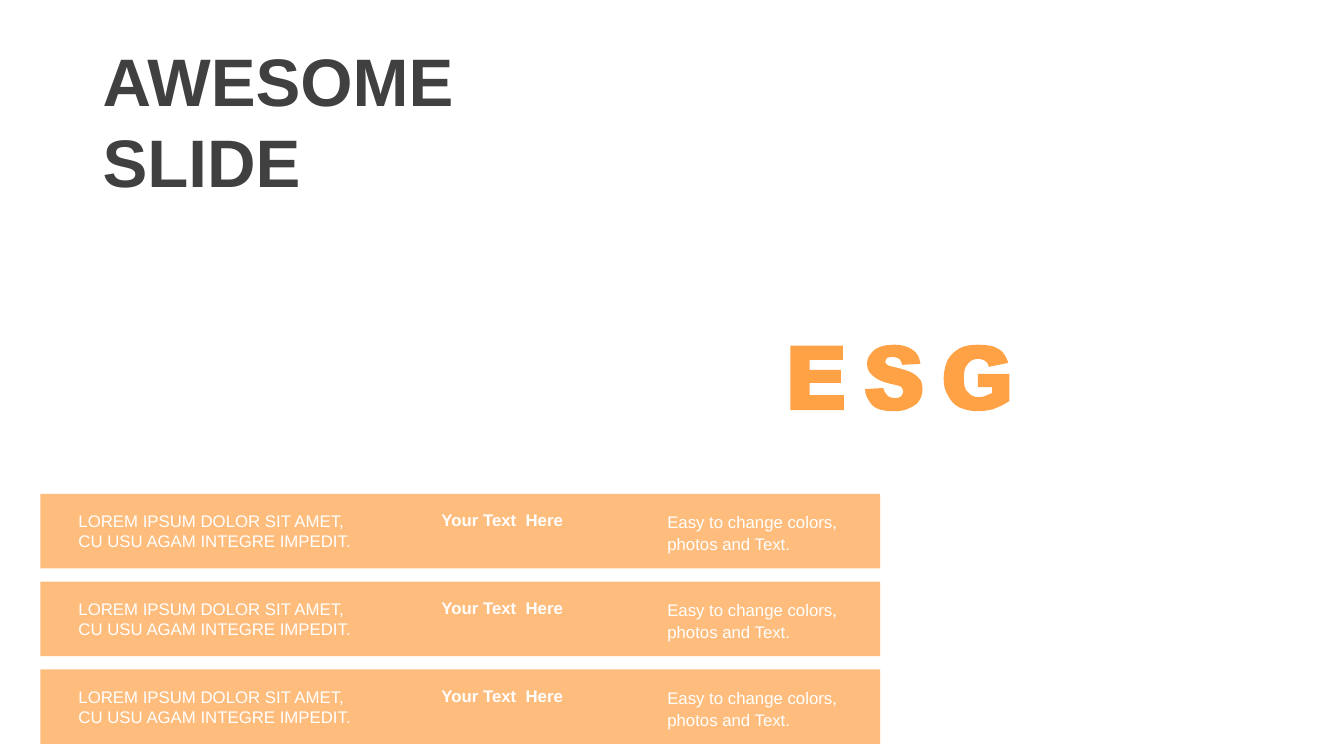
from dataclasses import dataclass

from lxml.etree import SubElement
from pptx import Presentation
from pptx.dml.color import RGBColor
from pptx.dml.fill import FillFormat
from pptx.enum.shapes import MSO_SHAPE as Shape
from pptx.enum.text import MSO_ANCHOR as Anchor, MSO_AUTO_SIZE as Fit
from pptx.oxml.ns import qn
from pptx.util import Pt

PX = 9144  # EMU in one px, 100 px to the inch
ORANGE, GREY, WHITE = "FFA246", "404040", "FFFFFF"
ROWS, PITCH, TOP = 3, 87, 490

Outline = list[tuple[int, ...]]


@dataclass
class Label:
    text: str
    left: int
    top: int
    width: int
    height: int
    size: int = 12
    color: str = WHITE
    bold: bool = False
    middle: bool = False
    spacing: float | None = None


# Tops of row labels count from the top of the bar
TITLE = Label("AWESOME\nSLIDE", 92, 33, 390, 172, 48, GREY, True, True)
CELLS = [
    Label("Easy to change colors, photos and Text.", 652, 11, 231, 53, spacing=1.1),
    Label("Your Text  Here", 428, 11, 185, 30, bold=True),
    Label("LOREM IPSUM DOLOR SIT AMET,\nCU USU AGAM INTEGRE IMPEDIT.",
          68, 12, 321, 50, middle=True),
]

# Letter outlines: a start, then lines (x, y) and curves (x1, y1, x2, y2, x, y)
LETTER_E = [
    (784, 343), (836, 343), (836, 357), (803, 357), (803, 367), (834, 367),
    (834, 380), (803, 380), (803, 392), (837, 392), (837, 407), (784, 407),
]
LETTER_S = [
    (887, 342), (895, 342, 901, 344, 905, 347), (910, 350, 912, 355, 913, 361),
    (895, 362), (894, 359, 893, 357, 892, 356), (890, 355, 888, 354, 885, 354),
    (883, 354, 881, 355, 880, 355), (879, 356, 878, 358, 878, 359),
    (878, 360, 879, 361, 880, 362), (880, 363, 883, 363, 886, 364),
    (895, 366, 901, 368, 905, 370), (908, 372, 911, 374, 913, 377),
    (914, 379, 915, 383, 915, 386), (915, 390, 914, 394, 912, 397),
    (910, 401, 906, 403, 902, 405), (898, 407, 893, 408, 887, 408),
    (876, 408, 869, 406, 865, 402), (861, 397, 858, 392, 858, 386),
    (876, 385), (877, 388, 878, 390, 879, 391), (881, 394, 884, 395, 887, 395),
    (890, 395, 892, 395, 894, 393), (895, 392, 896, 391, 896, 389),
    (896, 387, 895, 386, 894, 384), (893, 383, 889, 382, 884, 381),
    (875, 379, 869, 376, 866, 373), (862, 370, 860, 366, 860, 361),
    (860, 358, 861, 354, 863, 352), (865, 349, 868, 346, 871, 345),
    (875, 343, 880, 342, 887, 342),
]
LETTER_G = [
    (970, 342), (977, 342, 983, 343, 986, 344), (989, 345, 992, 347, 995, 350),
    (997, 353, 999, 356, 1000, 360), (981, 364),
    (980, 361, 979, 359, 977, 358), (975, 357, 973, 356, 970, 356),
    (966, 356, 962, 358, 960, 361), (957, 364, 956, 368, 956, 375),
    (956, 382, 957, 387, 960, 389), (962, 392, 966, 394, 970, 394),
    (973, 394, 975, 394, 977, 393), (979, 392, 981, 391, 984, 390),
    (984, 384), (970, 384), (970, 371), (1001, 371), (1001, 398),
    (995, 402, 990, 404, 985, 406), (981, 407, 976, 408, 969, 408),
    (962, 408, 956, 406, 951, 404), (946, 401, 943, 398, 940, 392),
    (937, 387, 936, 382, 936, 375), (936, 368, 938, 362, 940, 357),
    (943, 352, 947, 348, 953, 345), (957, 343, 963, 342, 970, 342),
]


def rgb(color: str) -> RGBColor:
    return RGBColor.from_string(color)


def paint(fill: FillFormat, color: str) -> None:
    fill.solid()
    fill.fore_color.rgb = rgb(color)


def add_label(slide, label: Label, top: int = 0) -> None:
    box = slide.shapes.add_textbox(label.left * PX, (top + label.top) * PX,
                                   label.width * PX, label.height * PX)
    frame = box.text_frame
    frame.word_wrap = True
    frame.auto_size = Fit.SHAPE_TO_FIT_TEXT
    frame.vertical_anchor = Anchor.MIDDLE if label.middle else Anchor.TOP
    frame.text = label.text
    for line in frame.paragraphs:
        line.line_spacing = label.spacing
        font = line.font
        font.name, font.size, font.bold = "Arial", Pt(label.size), label.bold
        font.color.rgb = rgb(label.color)


def add_bar(slide, top: int) -> None:
    bar = slide.shapes.add_shape(Shape.RECTANGLE, 40 * PX, top * PX, 833 * PX, 74 * PX)
    bar.shadow.inherit = False
    bar.line.fill.background()
    paint(bar.fill, ORANGE)
    tint = bar.fill._xPr.find(qn("a:solidFill"))[0]
    SubElement(tint, qn("a:alpha"), val="70000")


def add_word(slide, letters: list[Outline]) -> None:
    # Join the end points with straight lines
    pen = slide.shapes.build_freeform(*letters[0][0], scale=PX)
    for index, letter in enumerate(letters):
        if index:
            pen.move_to(*letter[0])
        pen.add_line_segments([part[-2:] for part in letter[1:]], close=True)
    word = pen.convert_to_shape()
    word.shadow.inherit = False
    word.line.fill.background()
    paint(word.fill, ORANGE)

    # Bend the lines that have control points
    left, top = round(word.left / PX), round(word.top / PX)
    lines = list(word._element.iter(qn("a:lnTo")))
    parts = [part for letter in letters for part in letter[1:]]
    for line, part in zip(lines, parts):
        if len(part) == 6:
            curve = line.makeelement(qn("a:cubicBezTo"))
            for x, y in zip(part[::2], part[1::2]):
                SubElement(curve, qn("a:pt"), x=str(x - left), y=str(y - top))
            line.getparent().replace(line, curve)


def main() -> None:
    deck = Presentation()
    deck.slide_width, deck.slide_height = 1333 * PX, 750 * PX
    slide = deck.slides.add_slide(deck.slide_layouts[6])

    # Title
    add_label(slide, TITLE)

    # Bars, then their labels
    tops = [TOP + row * PITCH for row in range(ROWS)]
    for top in tops:
        add_bar(slide, top)
    for top in tops:
        for cell in CELLS:
            add_label(slide, cell, top)

    # Lettering
    add_word(slide, [LETTER_E, LETTER_G, LETTER_S])
    deck.save("out.pptx")


if __name__ == "__main__":
    main()
